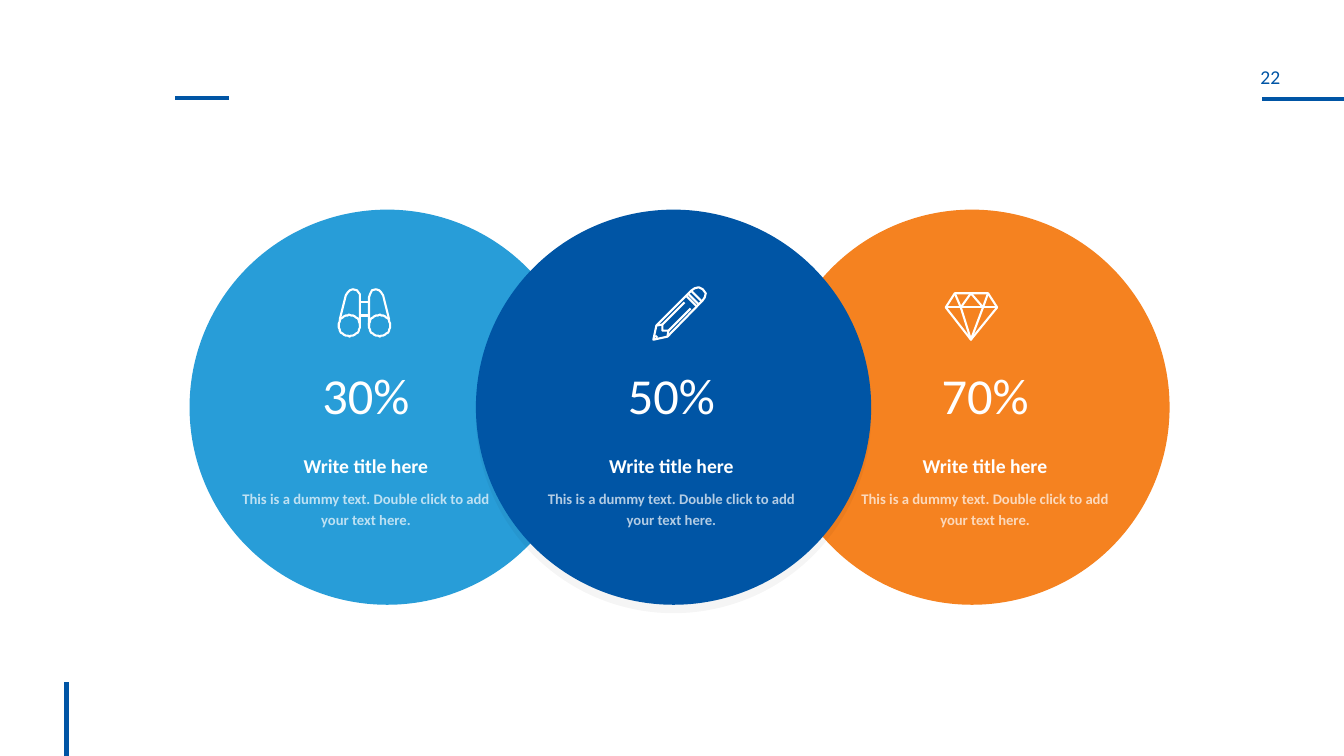
from math import cos, pi, sin

from lxml import etree
from pptx import Presentation
from pptx import util as u
from pptx.dml.color import RGBColor
from pptx.enum import shapes, text
from pptx.oxml.ns import qn

NAVY = RGBColor(0x00, 0x55, 0xA5)
SKY = RGBColor(0x28, 0x9D, 0xD8)
ORANGE = RGBColor(0xF5, 0x82, 0x20)
WHITE = RGBColor(0xFF, 0xFF, 0xFF)
BLACK = RGBColor(0x00, 0x00, 0x00)

HEADING = "Write title here"
BODY = "This is a dummy text. Double click to add your text here."


def ring(x, y, radius, steps=36):
    """Points of a closed circle."""
    angles = [2 * pi * step / steps for step in range(steps + 1)]
    return [(x + radius * cos(angle), y + radius * sin(angle)) for angle in angles]


# Icon strokes, in hundredths of an inch from the icon's top left corner
BARREL = [(2, 31), (8, 7), (10, 3.5), (12, 1.7), (15, 1), (19, 2.5),
          (21.5, 6), (22, 9), (22, 37)]
BINOCULARS = [
    BARREL, [(53 - x, y) for x, y in BARREL],
    ring(11.5, 37, 10.5), ring(41.5, 37, 10.5),
    [(22, 14), (31, 14)], [(22, 27), (31, 27)],
]
PENCIL = [
    [(1, 53), (4, 39), (39, 4), (42, 2), (46, 1), (50, 3), (53, 7),
     (52, 11), (50, 14.5), (15, 50), (1, 53)],
    [(4, 39), (10, 38), (10, 44), (16, 44), (15, 50)],
    [(10, 38), (32.5, 15.5)], [(16, 44), (38, 21.5)],
    [(34, 10), (44, 20)], [(36.5, 7.5), (46.5, 17.5)], [(39, 5), (49, 15)],
    [(3, 49), (5, 51)],
]
DIAMOND = [
    [(10, 1), (43, 1), (52, 15), (26.5, 47), (1, 15), (10, 1)],
    [(1, 15), (52, 15)],
    [(10, 1), (15.5, 15), (26.5, 1), (37.5, 15), (43, 1)],
    [(15.5, 15), (26.5, 47), (37.5, 15)],
]

# Circles stack in this order, so the middle one lies on top
TOPICS = [
    dict(share="30%", color=SKY, circle=3.84, column=3.63,
         icon=BINOCULARS, icon_at=(3.35, 2.86), raised=False),
    dict(share="70%", color=ORANGE, circle=9.64, column=9.77,
         icon=DIAMOND, icon_at=(9.37, 2.9), raised=False),
    dict(share="50%", color=NAVY, circle=6.68, column=6.66,
         icon=PENCIL, icon_at=(6.47, 2.84), raised=True),
]
WIDTH, HEIGHT = 13.33, 7.5
DIAMETER, CIRCLE_TOP = 3.92, 2.08
SHARE_TOP, SHARE_WIDTH, SHARE_HEIGHT = 3.56, 0.99, 0.71
COPY_TOP, COPY_WIDTH, COPY_HEIGHT = 4.41, 2.5, 0.89
RULES = [
    ((12.52, 0.98), (WIDTH, 0.98)),
    ((0.66, 6.77), (0.66, HEIGHT)),
    ((1.74, 0.97), (2.27, 0.97)),
]


def set_alpha(color_element, percent):
    etree.SubElement(color_element, qn("a:alpha")).set("val", str(percent * 1000))


def add_rule(slide, start, end):
    rule = slide.shapes.add_connector(
        shapes.MSO_CONNECTOR.STRAIGHT, *map(u.Inches, start + end))
    rule.line.color.rgb = NAVY
    rule.line.width = u.Pt(3)
    etree.SubElement(rule._element.spPr, qn("a:effectLst"))


def add_circle(slide, topic):
    circle = slide.shapes.add_shape(
        shapes.MSO_SHAPE.OVAL, u.Inches(topic["circle"] - DIAMETER / 2),
        u.Inches(CIRCLE_TOP), u.Inches(DIAMETER), u.Inches(DIAMETER))
    circle.fill.solid()
    circle.fill.fore_color.rgb = topic["color"]
    circle.line.fill.background()
    circle.shadow.inherit = False
    if topic["raised"]:
        effects = circle._element.spPr.find(qn("a:effectLst"))
        shadow = etree.SubElement(effects, qn("a:outerShdw"), blurRad="0",
                                  dist=str(u.Pt(6)), dir="5400000",
                                  algn="t", rotWithShape="0")
        color = etree.SubElement(shadow, qn("a:srgbClr"), val=str(BLACK))
        set_alpha(color, 4)


def add_icon(slide, strokes, position):
    builder = slide.shapes.build_freeform(*strokes[0][0], scale=u.Inches(0.01))
    for stroke in strokes:
        builder.move_to(*stroke[0])
        builder.add_line_segments(stroke[1:], close=False)
    icon = builder.convert_to_shape(*map(u.Inches, position))
    icon.fill.background()
    icon.line.color.rgb = WHITE
    icon.line.width = u.Pt(1.5)
    icon.shadow.inherit = False


def add_text(slide, box, lines, inset=0.05, wrap=True, spacing=None):
    """Centred text; each line is (wording, size, colour, bold, opacity)."""
    frame = slide.shapes.add_textbox(*map(u.Inches, box)).text_frame
    frame_format = dict(word_wrap=wrap, margin_left=0, margin_right=0,
                        margin_top=u.Inches(inset), margin_bottom=u.Inches(inset))
    for name, value in frame_format.items():
        setattr(frame, name, value)
    for index, (wording, size, color, bold, opacity) in enumerate(lines):
        paragraph = frame.add_paragraph() if index else frame.paragraphs[0]
        paragraph.alignment = text.PP_ALIGN.CENTER
        paragraph.line_spacing = spacing
        if index:
            paragraph.space_before = u.Pt(6)
        run = paragraph.add_run()
        run.text = wording
        for name, value in dict(name="Calibri", size=u.Pt(size), bold=bold).items():
            setattr(run.font, name, value)
        run.font.color.rgb = color
        if opacity < 100:
            set_alpha(run._r.rPr.find(".//" + qn("a:srgbClr")), opacity)


def main():
    presentation = Presentation()
    presentation.slide_width = u.Inches(WIDTH)
    presentation.slide_height = u.Inches(HEIGHT)
    slide = presentation.slides.add_slide(presentation.slide_layouts[6])

    for start, end in RULES:
        add_rule(slide, start, end)
    add_text(slide, (12, 0.64, 1.2, 0.33), [("22", 14, NAVY, False, 100)],
             inset=0, wrap=False)
    for topic in TOPICS:
        add_circle(slide, topic)
    for topic in TOPICS:
        add_icon(slide, topic["icon"], topic["icon_at"])
        center = topic["column"]
        add_text(slide,
                 (center - SHARE_WIDTH / 2, SHARE_TOP, SHARE_WIDTH, SHARE_HEIGHT),
                 [(topic["share"], 36, WHITE, False, 100)], wrap=False)
        add_text(slide,
                 (center - COPY_WIDTH / 2, COPY_TOP, COPY_WIDTH, COPY_HEIGHT),
                 [(HEADING, 14, WHITE, True, 100), (BODY, 10.5, WHITE, True, 70)],
                 spacing=1.2)
    presentation.save("out.pptx")


if __name__ == "__main__":
    main()
